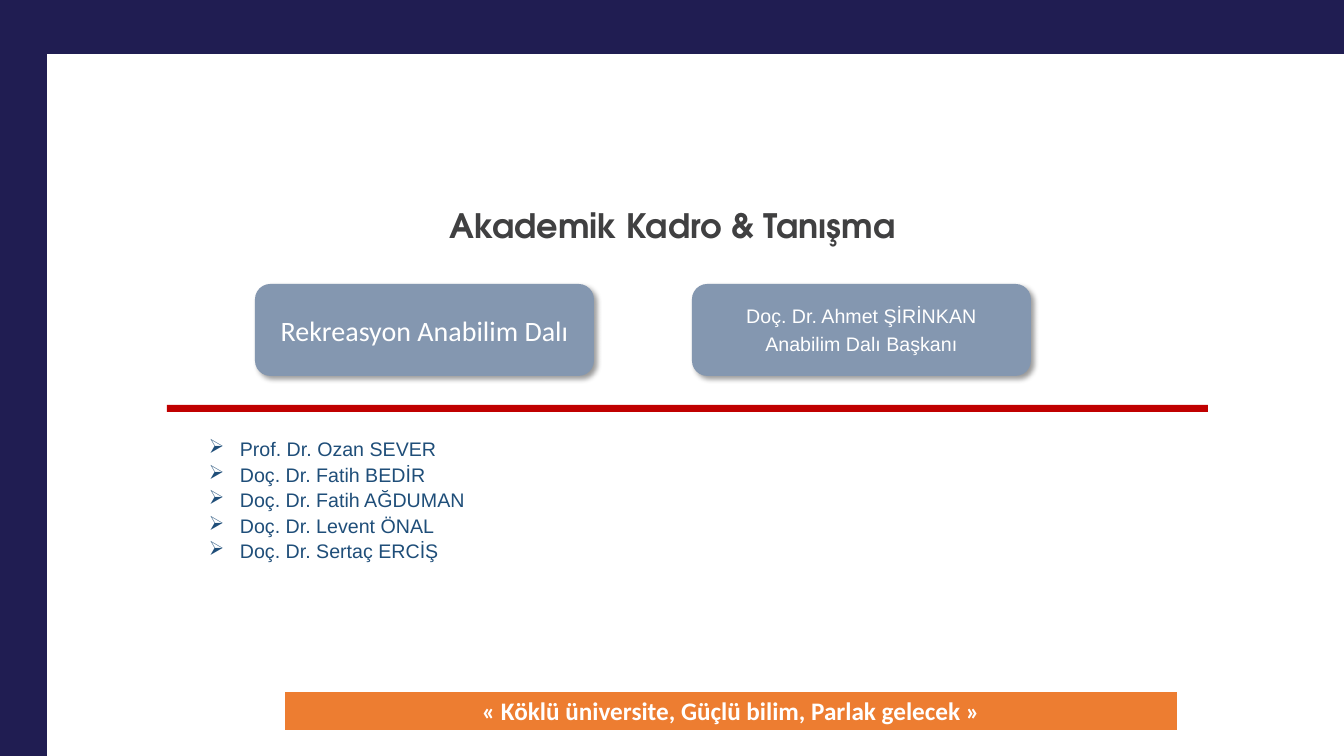
from lxml import etree
from pptx import Presentation
from pptx.dml.color import RGBColor
from pptx.enum.shapes import MSO_SHAPE as SHAPE
from pptx.enum.text import MSO_ANCHOR as ANCHOR, PP_ALIGN as ALIGN
from pptx.oxml import parse_xml
from pptx.oxml.ns import nsdecls, qn
from pptx.util import Pt

PX = 914400 / 100.8
COLORS = {
    "navy": "201D52", "title": "404041", "card": "8497B0", "rule": "C00000",
    "names": "1F4E79", "banner": "ED7D31", "white": "FFFFFF",
}


def add_block(kind, box, color):
    s = shapes.add_shape(kind, *[round(v * PX) for v in box])
    s.shadow.inherit = False
    s.fill.solid()
    s.fill.fore_color.rgb = RGBColor.from_string(COLORS[color])
    s.line.fill.background()
    return s


def write(tf, lines, font, size, color, bold=False, bullet=None, **para_format):
    """Fill a text frame with one equally formatted paragraph per line."""
    for i, line in enumerate(lines):
        p = tf.paragraphs[0] if i == 0 else tf.add_paragraph()
        if bullet:
            pPr = p._p.get_or_add_pPr()
            pPr.set("marL", str(round(31 * PX)))
            pPr.set("indent", str(round(-31 * PX)))
            etree.SubElement(pPr, qn("a:buChar")).set("char", bullet)
        for name, value in para_format.items():
            setattr(p, name, value)
        r = p.add_run()
        r.text = line
        r.font.name, r.font.size, r.font.bold = font, Pt(size), bold
        r.font.color.rgb = RGBColor.from_string(COLORS[color])


prs = Presentation()
prs.slide_width, prs.slide_height = round(1344 * PX), round(756 * PX)
shapes = prs.slides.add_slide(prs.slide_layouts[6]).shapes

# Frame
add_block(SHAPE.RECTANGLE, (0, 0, 47, 756), "navy")
add_block(SHAPE.RECTANGLE, (0, 0, 1344, 54), "navy")

# Title
title = shapes.add_textbox(*[round(v * PX) for v in (199, 196, 947, 64)])
title.text_frame.word_wrap = True
title.text_frame.vertical_anchor = ANCHOR.MIDDLE
write(title.text_frame, ["Akademik Kadro & Tanışma"], "TeX Gyre Adventor", 24,
      "title", bold=True, alignment=ALIGN.CENTER, line_spacing=0.9)

# Motto banner
table = shapes.add_table(1, 1, *[round(v * PX) for v in (284, 691, 894, 39)]).table
table.first_row = table.horz_banding = False
cell = table.cell(0, 0)
cell.fill.solid()
cell.fill.fore_color.rgb = RGBColor.from_string(COLORS["banner"])
tcPr = cell._tc.get_or_add_tcPr()
for i, (side, width) in enumerate({"L": 1, "R": 1, "T": 1, "B": 3}.items()):
    tcPr.insert(i, parse_xml(
        f'<a:ln{side} {nsdecls("a")} w="{Pt(width)}"><a:solidFill>'
        f'<a:srgbClr val="{COLORS["white"]}"/></a:solidFill></a:ln{side}>'))
write(cell.text_frame, ["« Köklü üniversite, Güçlü bilim, Parlak gelecek »"],
      "Calibri", 18, "white", bold=True, alignment=ALIGN.CENTER)

# Department and its head
cards = [
    (255, ["Rekreasyon Anabilim Dalı"], "Calibri", 20, 0),
    (692, ["Doç. Dr. Ahmet ŞİRİNKAN", "Anabilim Dalı Başkanı"], "Arial", 14, 3),
]
for left, lines, font, size, after in cards:
    s = add_block(SHAPE.ROUNDED_RECTANGLE, (left, 284, 339, 92), "card")
    s._element.spPr.find(qn("a:effectLst")).append(parse_xml(
        f'<a:outerShdw {nsdecls("a")} blurRad="{Pt(4)}" dist="{Pt(3)}" dir="2700000" '
        'algn="tl" rotWithShape="0"><a:srgbClr val="000000"><a:alpha val="40000"/>'
        '</a:srgbClr></a:outerShdw>'))
    tf = s.text_frame
    tf.word_wrap = True
    tf.vertical_anchor = ANCHOR.MIDDLE
    for side in ("left", "top", "right", "bottom"):
        setattr(tf, f"margin_{side}", round(4 * PX))
    write(tf, lines, font, size, "white", alignment=ALIGN.CENTER, space_after=Pt(after))

add_block(SHAPE.RECTANGLE, (167, 405, 1041, 7), "rule")

# Staff list
staff = shapes.add_textbox(*[round(v * PX) for v in (199, 435, 415, 134)])
staff.text_frame.word_wrap = True
write(staff.text_frame,
      ["Prof. Dr. Ozan SEVER", "Doç. Dr. Fatih BEDİR", "Doç. Dr. Fatih AĞDUMAN",
       "Doç. Dr. Levent ÖNAL", "Doç. Dr. Sertaç ERCİŞ"],
      "Arial", 14, "names", bullet="➢", line_spacing=0.9, space_after=Pt(3))

prs.save("out.pptx")
